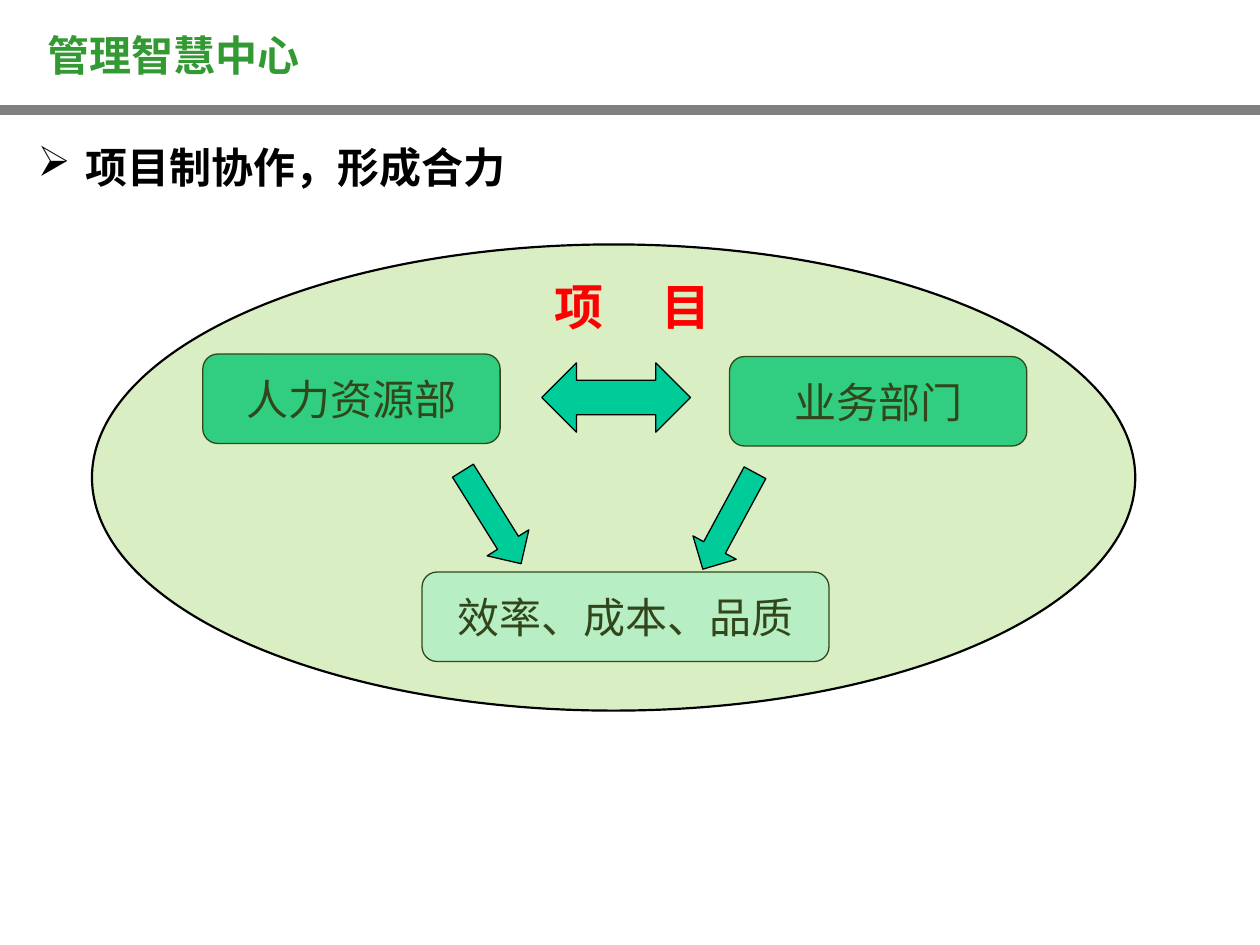
from lxml.etree import SubElement
from pptx import Presentation
from pptx.dml.color import RGBColor
from pptx.enum.shapes import MSO_SHAPE
from pptx.enum.text import MSO_ANCHOR, PP_ALIGN
from pptx.oxml.ns import qn
from pptx.util import Inches, Pt


def add_figure(kind, bounds, fill, line_width=0.75, rotation=0):
    figure = page.shapes.add_shape(kind, *map(Inches, bounds))
    figure.shadow.inherit = False
    figure.fill.solid()
    figure.fill.fore_color.rgb = RGBColor.from_string(fill)
    if line_width:
        figure.line.color.rgb = RGBColor.from_string("000000")
        figure.line.width = Pt(line_width)
    else:
        figure.line.fill.background()
    figure.rotation = rotation
    return figure


def write(box, text, color="000000", size=24, bold=False, latin="Times New Roman"):
    """Fill the box with one vertically centred line and return its paragraph."""
    frame = box.text_frame
    frame.word_wrap = True
    frame.vertical_anchor = MSO_ANCHOR.MIDDLE
    para = frame.paragraphs[0]
    span = para.add_run()
    span.text = text
    formats = {"size": Pt(size), "bold": bold, "name": latin}
    for name, value in formats.items():
        setattr(span.font, name, value)
    span.font.color.rgb = RGBColor.from_string(color)
    properties = span.font._element
    SubElement(properties, qn("a:ea"), typeface="Noto Sans CJK SC")
    return para


deck = Presentation()
deck.slide_width, deck.slide_height = Inches(10), Inches(7.5)
page = deck.slides.add_slide(deck.slide_layouts[6])

# Header
add_figure(MSO_SHAPE.FLOWCHART_PROCESS, (0, 0.83, 10, 0.08), "808080", line_width=0)
header = page.shapes.add_textbox(*map(Inches, (0, 0, 7.75, 0.83)))
header_margins = {"margin_left": 0.38, "margin_top": 0.04, "margin_right": 0, "margin_bottom": 0}
for side, margin in header_margins.items():
    setattr(header.text_frame, side, Inches(margin))
write(header, "管理智慧中心", "339933", bold=True, latin="Noto Sans CJK SC")

# Bulleted heading
heading = page.shapes.add_textbox(*map(Inches, (0.2, 1.07, 8.58, 0.5)))
para = write(heading, "项目制协作，形成合力", bold=True)
properties = para._p.get_or_add_pPr()
properties.set("marL", str(Inches(0.38)))
properties.set("indent", str(-Inches(0.38)))
SubElement(properties, qn("a:buChar"), char="➢")

# Departments and results, beneath the translucent project ellipse
for text, bounds, fill in (
    ("人力资源部", (1.61, 2.81, 2.36, 0.71), "00CC99"),
    ("业务部门", (5.79, 2.83, 2.36, 0.71), "00CC99"),
    ("效率、成本、品质", (3.35, 4.54, 3.23, 0.71), "CCFFFF"),
):
    box = add_figure(MSO_SHAPE.ROUNDED_RECTANGLE, bounds, fill)
    write(box, text).alignment = PP_ALIGN.CENTER

project = add_figure(MSO_SHAPE.OVAL, (0.73, 1.94, 8.28, 3.7), "92D050", line_width=1.25)
fill_color = project._element.spPr.find(qn("a:solidFill"))[0]
SubElement(fill_color, qn("a:alpha"), val="34000")

# Arrows
for kind, bounds, rotation in (
    (MSO_SHAPE.LEFT_RIGHT_ARROW, (4.3, 2.88, 1.18, 0.55), 0),
    (MSO_SHAPE.DOWN_ARROW, (3.71, 3.67, 0.39, 0.87), 328),
    (MSO_SHAPE.DOWN_ARROW, (5.59, 3.7, 0.39, 0.87), 28.4),
):
    add_figure(kind, bounds, "00CC99", rotation=rotation)

# Project label, its two characters spread by a tab stop
label = page.shapes.add_textbox(*map(Inches, (4.3, 2.14, 1.5, 0.57)))
para = write(label, "项\t目", "FF0000", size=28, bold=True)
tabs = SubElement(para._p.get_or_add_pPr(), qn("a:tabLst"))
SubElement(tabs, qn("a:tab"), pos=str(Inches(0.85)), algn="l")

deck.save("out.pptx")
